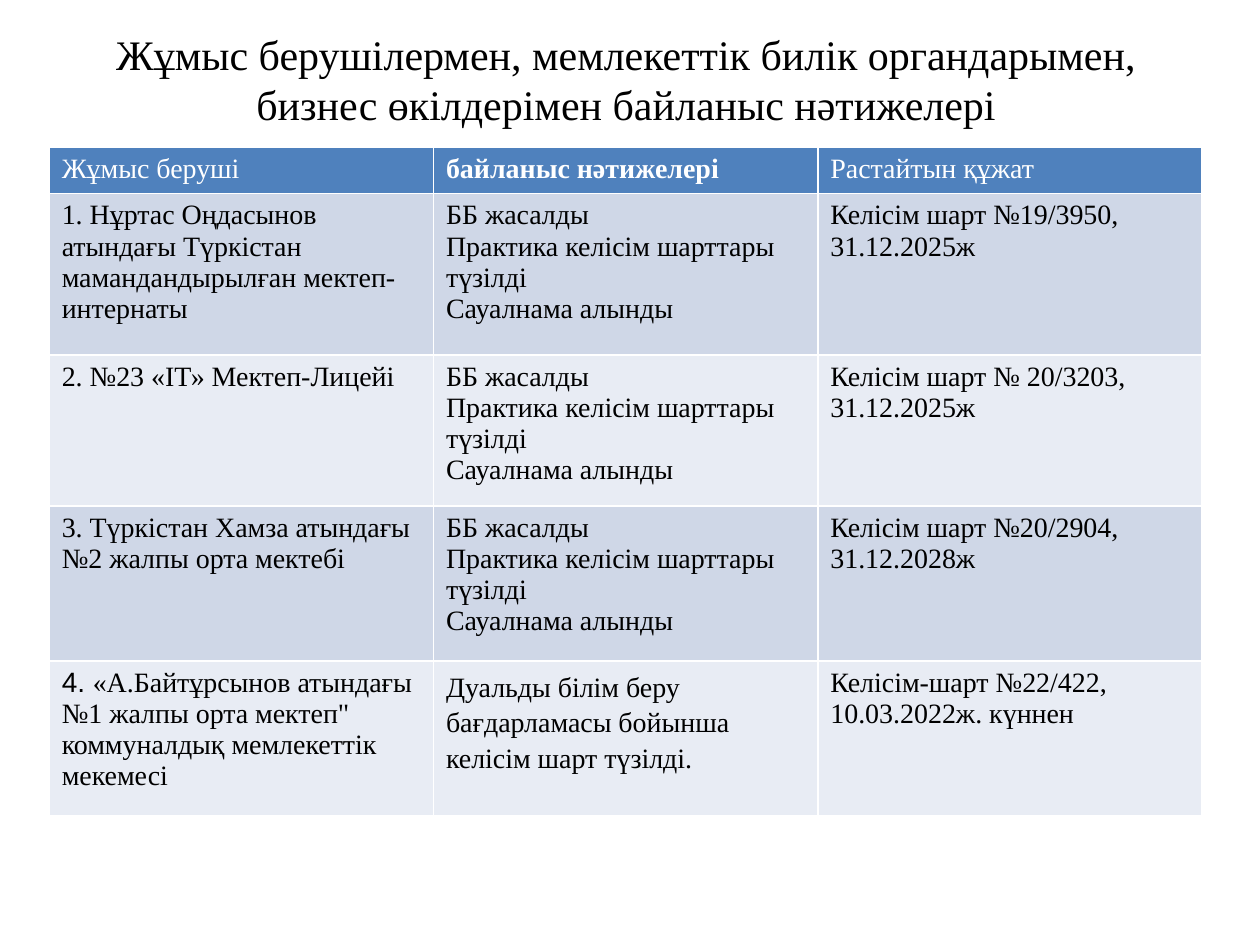
from pptx import Presentation
from pptx.dml.color import RGBColor
from pptx.enum.text import MSO_ANCHOR, PP_ALIGN
from pptx.util import Inches, Pt

CENTER = PP_ALIGN.CENTER
MIDDLE = MSO_ANCHOR.MIDDLE

COLORS = {
    "text": "000000",
    "header_text": "FFFFFF",
    "header": "4F81BD",
    "band_dark": "CFD7E7",
    "band_light": "E8ECF4",
}
TITLE = ("Жұмыс берушілермен, мемлекеттік билік органдарымен, "
         "бизнес өкілдерімен байланыс нәтижелері")
HEADERS = ["Жұмыс беруші", "байланыс нәтижелері", "Растайтын құжат"]
RESULTS = "ББ жасалды\nПрактика келісім шарттары түзілді\nСауалнама алынды"
EMPLOYERS = [
    ["1. Нұртас Оңдасынов атындағы Түркістан мамандандырылған мектеп-интернаты",
     RESULTS, "Келісім шарт №19/3950, 31.12.2025ж"],
    ["2. №23 «ІТ» Мектеп-Лицейі",
     RESULTS, "Келісім шарт № 20/3203, 31.12.2025ж"],
    ["3. Түркістан Хамза атындағы №2 жалпы орта мектебі",
     RESULTS, "Келісім шарт №20/2904, 31.12.2028ж"],
    ["4. ",
     "Дуальды білім беру бағдарламасы бойынша келісім шарт түзілді.",
     "Келісім-шарт №22/422, 10.03.2022ж. күннен"],
]
LAST_EMPLOYER = ("«А.Байтұрсынов атындағы №1 жалпы орта мектеп\" "
                 "коммуналдық мемлекеттік мекемесі")
COL_WIDTH = 3.05
ROW_HEIGHTS = [0.36, 1.28, 1.2, 1.23, 1.23]


class SlideBuilder:
    """Holds the text style and the current slide."""

    def __init__(self, slide, font="Times New Roman"):
        self.slide = slide
        self.font = font

    def style(self, r, size, color="text", bold=False, font=None):
        r.font.name = font or self.font
        r.font.size = Pt(size)
        r.font.bold = bold
        r.font.color.rgb = RGBColor.from_string(COLORS[color])

    def title(self, text, left, top, width, height):
        box = self.slide.shapes.add_textbox(
            Inches(left), Inches(top), Inches(width), Inches(height))
        tf = box.text_frame
        tf.word_wrap = True
        tf.vertical_anchor = MIDDLE
        tf.text = text
        p = tf.paragraphs[0]
        p.alignment = CENTER
        self.style(p.runs[0], 24)

    def cell(self, cell, text, fill, color="text", bold=False):
        cell.fill.solid()
        cell.fill.fore_color.rgb = RGBColor.from_string(COLORS[fill])
        cell.text_frame.text = text
        for p in cell.text_frame.paragraphs:
            for r in p.runs:
                self.style(r, 16, color, bold)

    def table(self, headers, rows, left, top):
        table = self.slide.shapes.add_table(
            len(rows) + 1, len(headers), Inches(left), Inches(top),
            Inches(COL_WIDTH * len(headers)), Inches(sum(ROW_HEIGHTS))).table
        for column in table.columns:
            column.width = Inches(COL_WIDTH)
        for row, height in zip(table.rows, ROW_HEIGHTS):
            row.height = Inches(height)
        for j, text in enumerate(headers):
            self.cell(table.cell(0, j), text, "header", "header_text", j == 1)
        for i, row in enumerate(rows, 1):
            fill = "band_dark" if i % 2 else "band_light"
            for j, text in enumerate(row):
                self.cell(table.cell(i, j), text, fill)
        return table


def main():
    prs = Presentation()
    prs.slide_width, prs.slide_height = Inches(10), Inches(7.5)
    s = SlideBuilder(prs.slides.add_slide(prs.slide_layouts[6]))
    s.title(TITLE, 0.47, 0, 9, 1.25)
    table = s.table(HEADERS, EMPLOYERS, 0.39, 1.17)
    p = table.cell(4, 0).text_frame.paragraphs[0]
    s.style(p.runs[0], 16, font="Arial")
    r = p.add_run()
    r.text = LAST_EMPLOYER
    s.style(r, 16)
    table.cell(4, 1).text_frame.paragraphs[0].line_spacing = 1.15
    prs.save("out.pptx")


if __name__ == "__main__":
    main()
